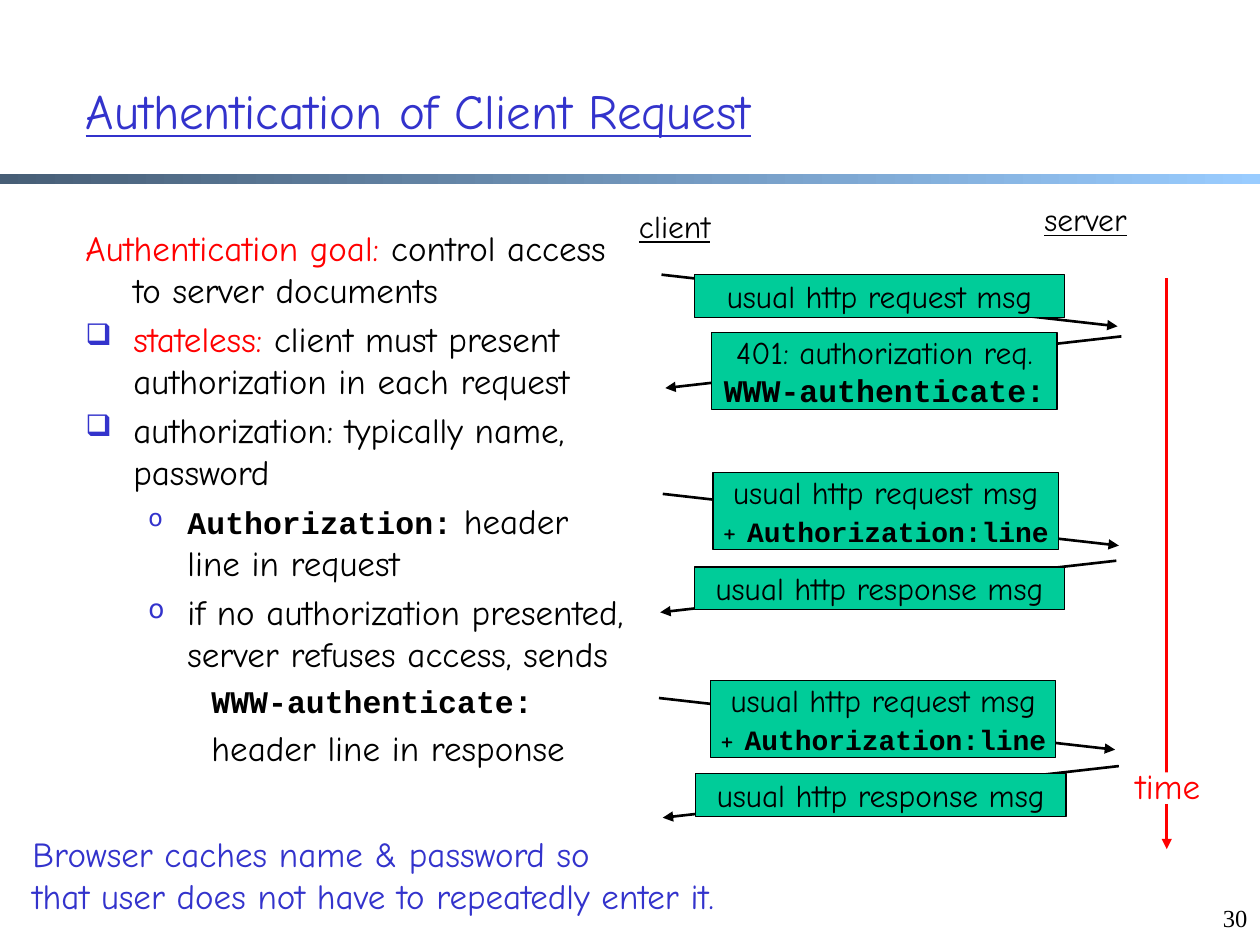
from dataclasses import dataclass

from lxml.etree import SubElement
from pptx import Presentation
from pptx.dml.color import RGBColor
from pptx.enum.shapes import MSO_CONNECTOR, MSO_SHAPE
from pptx.enum.text import MSO_ANCHOR, MSO_AUTO_SIZE, PP_ALIGN
from pptx.oxml.ns import qn
from pptx.util import Inches, Pt


@dataclass(frozen=True)
class Theme:
    font: str = "Comic Neue"
    code_font: str = "Courier New"
    number_font: str = "Times New Roman"
    black: str = "000000"
    white: str = "FFFFFF"
    blue: str = "3333CC"
    red: str = "FF0000"
    green: str = "00CC99"
    band_start: str = "475E76"
    band_end: str = "99CCFF"
    title: int = 28
    body: int = 20
    label: int = 18
    small_code: int = 16
    number: int = 14
    paragraph_gap: int = 4


THEME = Theme()
COLUMNS, ROWS = 100, 75
CELL = Inches(0.1)


@dataclass(frozen=True)
class Area:
    column: float
    row: float
    width: float
    height: float

    def lengths(self) -> tuple:
        return tuple(round(cells * CELL) for cells in (self.column, self.row, self.width, self.height))


@dataclass(frozen=True)
class Run:
    text: str
    size: int = THEME.body
    color: str = THEME.black
    font: str = THEME.font
    bold: bool = False
    underline: bool = False


@dataclass(frozen=True)
class Line:
    runs: tuple
    indent: float = 0
    hanging: float = 0
    bullet: str = ""
    bullet_percent: int = 100
    gap: int = 0


@dataclass(frozen=True)
class Message:
    start: tuple
    reach: float
    box: tuple
    lines: tuple


def code(text: str, size: int = THEME.label) -> Run:
    return Run(text, size, font=THEME.code_font, bold=True)


def label(text: str) -> Run:
    return Run(text, THEME.label)


def goal(*runs: Run, **options) -> Line:
    return Line(runs, 3.8, 3.8, gap=THEME.paragraph_gap, **options)


def square(*runs: Run) -> Line:
    return goal(*runs, bullet="❑", bullet_percent=85)


def circle(*runs: Run) -> Line:
    return Line(runs, 8.1, 3.1, "o", 75, THEME.paragraph_gap)


def detail(run: Run) -> Line:
    return Line((run,), 12.5, 2.5, gap=THEME.paragraph_gap)


BODY = (
    goal(Run("Authentication goal:", color=THEME.red), Run(" control access to server documents")),
    square(Run("stateless:", color=THEME.red), Run(" client must present authorization in each request")),
    square(Run("authorization: typically name, password")),
    circle(code("Authorization:"), Run(" header line in request")),
    circle(Run("if no authorization presented, server refuses access, sends")),
    detail(code("WWW-authenticate:")),
    detail(Run("header line in response")),
)

REQUEST = Line((label("usual http request msg"),))
RESPONSE = Line((label("usual http response msg"),))
CHALLENGE = (Line((label("401: authorization req."),)), Line((code("WWW-authenticate:"),)))
AUTHORIZED = (REQUEST, Line((label("+ "), code("Authorization:line", THEME.small_code))))
REACH, DROP = 36.2, 4.1
MESSAGES = (
    Message((52.5, 21.8), REACH, (55.1, 21.8), (REQUEST,)),
    Message((89, 26.7), -REACH, (56.5, 26.4), CHALLENGE),
    Message((52.6, 39.2), REACH, (56.6, 37.5), AUTHORIZED),
    Message((88.6, 44.5), -REACH, (55.1, 45), (RESPONSE,)),
    Message((52.3, 55.4), REACH, (56.4, 54), AUTHORIZED),
    Message((88.8, 60.8), -REACH, (55.2, 61.4), (RESPONSE,)),
)


def write_text(text_frame, lines: tuple, align=PP_ALIGN.LEFT, anchor=MSO_ANCHOR.TOP) -> None:
    text_frame.word_wrap = True
    text_frame.auto_size = MSO_AUTO_SIZE.NONE
    text_frame.vertical_anchor = anchor
    for index, line in enumerate(lines):
        paragraph = text_frame.add_paragraph() if index else text_frame.paragraphs[0]
        paragraph.alignment = align
        paragraph.space_before = Pt(line.gap)
        properties = paragraph._p.get_or_add_pPr()
        properties.set("marL", str(round(line.indent * CELL)))
        properties.set("indent", str(round(-line.hanging * CELL)))
        if line.bullet:
            color = SubElement(properties, qn("a:buClr"))
            SubElement(color, qn("a:srgbClr"), val=THEME.blue)
            SubElement(properties, qn("a:buSzPct"), val=str(line.bullet_percent * 1000))
            SubElement(properties, qn("a:buChar"), char=line.bullet)
        for part in line.runs:
            run = paragraph.add_run()
            run.text = part.text
            run.font.name = part.font
            run.font.size = Pt(part.size)
            run.font.bold = part.bold
            run.font.underline = part.underline
            run.font.color.rgb = RGBColor.from_string(part.color)


def add_text(slide, area: Area, *lines: Line, align=PP_ALIGN.LEFT) -> None:
    write_text(slide.shapes.add_textbox(*area.lengths()).text_frame, lines, align)


def add_box(slide, area: Area, fill: str, outline: str = ""):
    shape = slide.shapes.add_shape(MSO_SHAPE.RECTANGLE, *area.lengths())
    shape.shadow.inherit = False
    shape.fill.solid()
    shape.fill.fore_color.rgb = RGBColor.from_string(fill)
    if outline:
        shape.line.color.rgb = RGBColor.from_string(outline)
        shape.line.width = Pt(0.75)
    else:
        shape.line.fill.background()
    return shape


def add_arrow(slide, start: tuple, end: tuple, color: str) -> None:
    points = (round(cells * CELL) for cells in (*start, *end))
    connector = slide.shapes.add_connector(MSO_CONNECTOR.STRAIGHT, *points)
    connector.line.color.rgb = RGBColor.from_string(color)
    connector.line.width = Pt(1.5)
    SubElement(connector.line._get_or_add_ln(), qn("a:tailEnd"), type="triangle")
    SubElement(connector._element.spPr, qn("a:effectLst"))


def add_message(slide, message: Message) -> None:
    column, row = message.start
    add_arrow(slide, message.start, (column + message.reach, row + DROP), THEME.black)
    width, height, text_height = (29.4, 3.4, 4) if len(message.lines) == 1 else (27.4, 6.1, 7)
    left, top = message.box
    add_box(slide, Area(left, top, width, height), THEME.green, THEME.black)
    text_width = 29.6
    text_area = Area(left + (width - text_width) / 2, top + (height - text_height) / 2, text_width, text_height)
    add_text(slide, text_area, *message.lines, align=PP_ALIGN.CENTER)


def add_band(slide) -> None:
    band = add_box(slide, Area(0, 13.8, COLUMNS, 0.8), THEME.band_start)
    band.fill.gradient()
    band.fill.gradient_angle = 0
    for stop, color in zip(band.fill.gradient_stops, (THEME.band_start, THEME.band_end)):
        stop.color.rgb = RGBColor.from_string(color)


def main() -> None:
    presentation = Presentation()
    presentation.slide_width = COLUMNS * CELL
    presentation.slide_height = ROWS * CELL
    slide = presentation.slides.add_slide(presentation.slide_layouts[5])
    add_band(slide)
    title = slide.shapes.title
    title.left, title.top, title.width, title.height = Area(5.8, 2.5, 85, 12.5).lengths()
    heading = Run("Authentication of Client Request", THEME.title, THEME.blue, underline=True)
    write_text(title.text_frame, (Line((heading,)),), anchor=MSO_ANCHOR.MIDDLE)
    add_text(slide, Area(95, 71.2, 5, 5), Line((Run("30", THEME.number, font=THEME.number_font),)), align=PP_ALIGN.RIGHT)
    add_text(slide, Area(5.8, 17.5, 44.7, 47.1), *BODY)
    for name, area in (("client", Area(48.2, 15.9, 10.7, 5)), ("server", Area(80.1, 15.4, 12.1, 5))):
        add_text(slide, area, Line((Run(name, THEME.label, underline=True),)), align=PP_ALIGN.CENTER)
    for message in MESSAGES:
        add_message(slide, message)
    add_arrow(slide, (92.6, 22.1), (92.6, 67.4), THEME.red)
    add_box(slide, Area(89.7, 61.3, 6.2, 2.5), THEME.white)
    add_text(slide, Area(88.8, 60.2, 7.8, 4.3), Line((Run("time", color=THEME.red),)), align=PP_ALIGN.CENTER)
    notes = ("Browser caches name & password so", "that user does not have to repeatedly enter it.")
    add_text(slide, Area(1.6, 65.6, 62.7, 7.7), *(Line((Run(note, color=THEME.blue),)) for note in notes))
    presentation.save("out.pptx")


if __name__ == "__main__":
    main()
